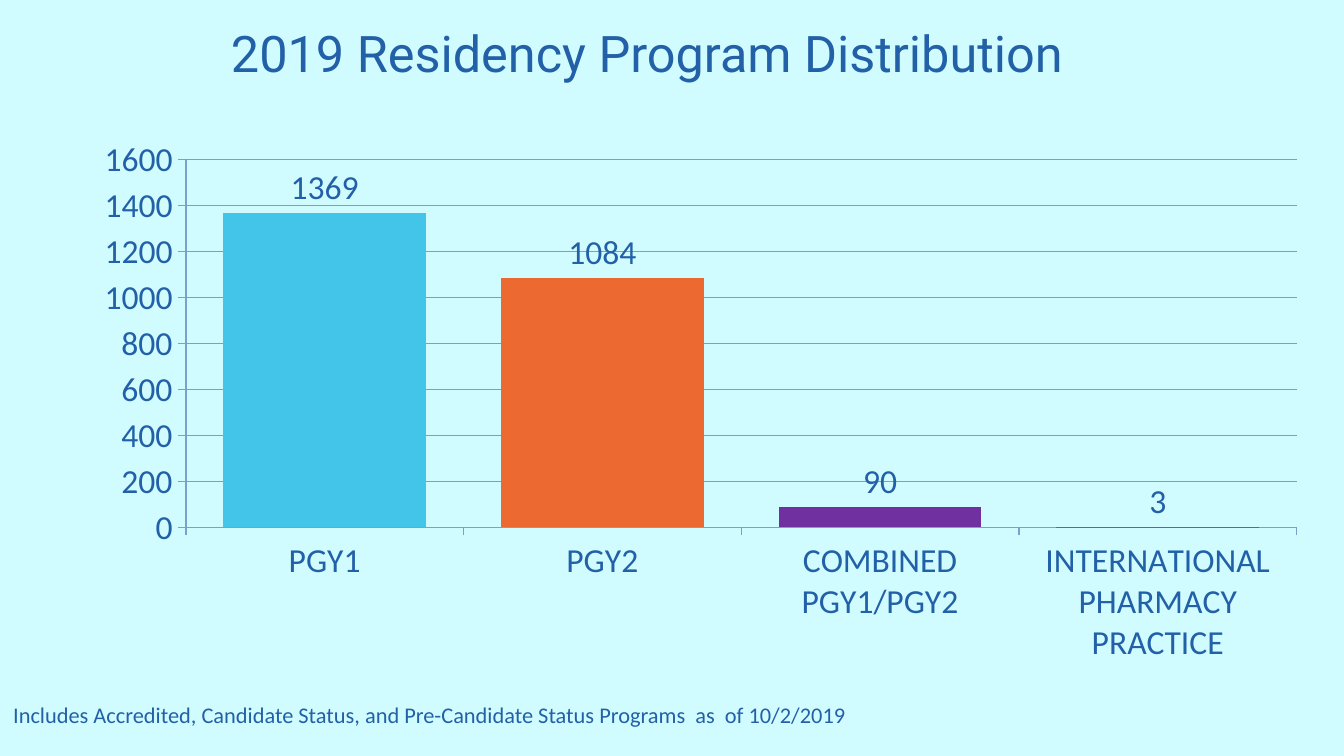
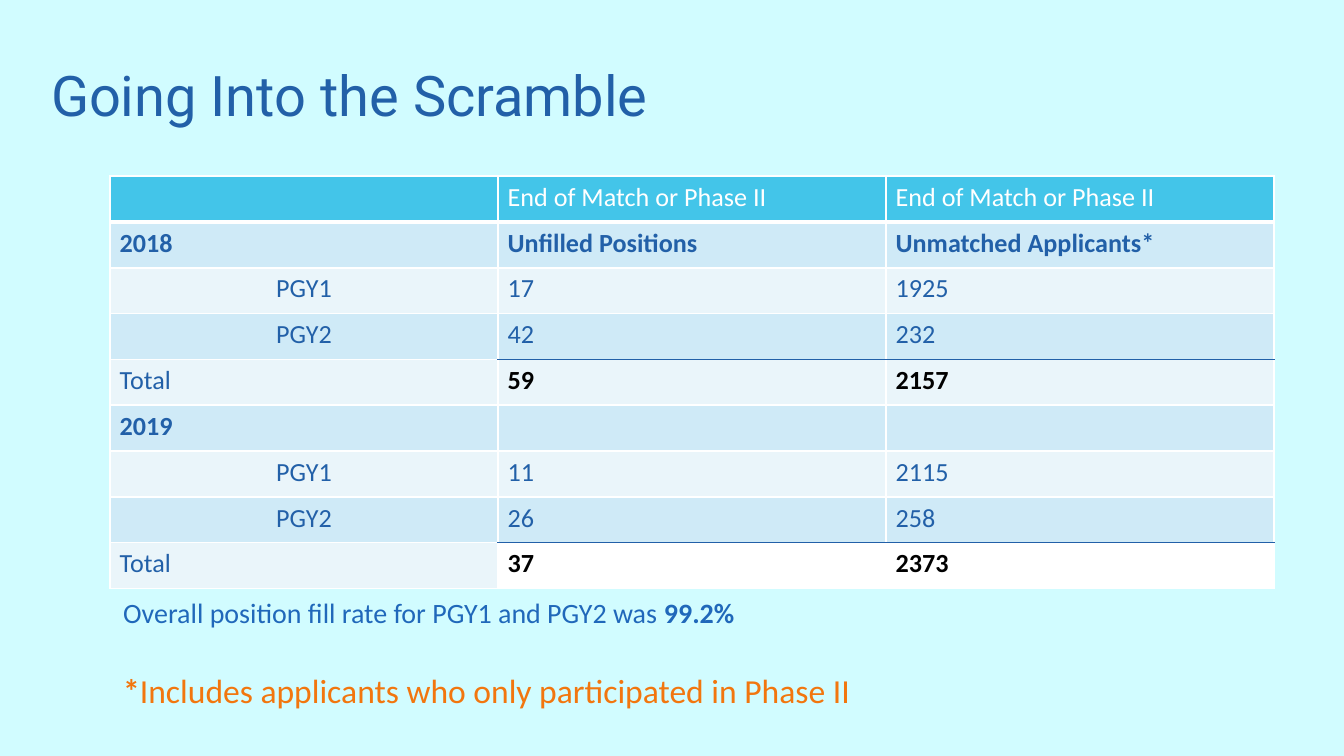
from lxml import etree
from pptx import Presentation
from pptx.chart.data import CategoryChartData
from pptx.dml.color import RGBColor
from pptx.enum.chart import XL_CHART_TYPE, XL_LABEL_POSITION, XL_TICK_MARK
from pptx.enum.text import MSO_ANCHOR, MSO_AUTO_SIZE, PP_ALIGN
from pptx.oxml import parse_xml
from pptx.oxml.ns import nsdecls, qn
from pptx.util import Cm, Pt

# Shared look
PALE_CYAN = RGBColor(0xD1, 0xFC, 0xFF)
NAVY = RGBColor(0x22, 0x60, 0xA8)
BLUE = RGBColor(0x20, 0x68, 0xBA)
SKY = RGBColor(0x43, 0xC5, 0xE9)
ORANGE = RGBColor(0xED, 0x69, 0x32)
NOTE_ORANGE = RGBColor(0xF2, 0x76, 0x0E)
PURPLE = RGBColor(0x70, 0x30, 0xA0)
BRICK = RGBColor(0xAA, 0x50, 0x48)
GRID = RGBColor(0x7A, 0xA3, 0xB5)
AXIS = RGBColor(0x7F, 0x9F, 0xC8)
BAND_DARK = RGBColor(0xCF, 0xEA, 0xF7)
BAND_LIGHT = RGBColor(0xEA, 0xF5, 0xFA)
WHITE = RGBColor(0xFF, 0xFF, 0xFF)
BLACK = RGBColor(0, 0, 0)
TITLE_FONT, BODY_FONT = "Roboto", "Calibri"

# Content: residency programs (category, count, colour)
DISTRIBUTION_TITLE = "2019 Residency Program Distribution"
PROGRAMS = [
    ("PGY1", 1369, SKY),
    ("PGY2", 1084, ORANGE),
    ("COMBINED PGY1/PGY2", 90, PURPLE),
    ("INTERNATIONAL PHARMACY PRACTICE", 3, BRICK),
]
PLOT_AREA = {"x": 0.096, "y": 0.039, "w": 0.887, "h": 0.603}
STATUS_NOTE = ("Includes Accredited, Candidate Status, and Pre-Candidate "
               "Status Programs  as  of 10/2/2019")

# Content: scramble results
SCRAMBLE_TITLE = "Going Into the Scramble"
RESULTS = [
    ("", "End of Match or Phase II", "End of Match or Phase II"),
    ("2018", "Unfilled Positions", "Unmatched Applicants*"),
    ("PGY1", "17", "1925"),
    ("PGY2", "42", "232"),
    ("Total", "59", "2157"),
    ("2019", "", ""),
    ("PGY1", "11", "2115"),
    ("PGY2", "26", "258"),
    ("Total", "37", "2373"),
]
# Each note: space before, then runs of (text, size, bold, colour)
RESULT_NOTES = [
    (0, [("Overall position fill rate for PGY1 and PGY2 was ", 15, False, BLUE),
         ("99.2%", 15, True, BLUE)]),
    (22, [("*", 18, True, NOTE_ORANGE),
          ("Includes applicants who only participated in Phase II", 18, False,
           NOTE_ORANGE)]),
]


def add_run(paragraph, text, size, color, bold=False, font=BODY_FONT):
    run = paragraph.add_run()
    run.text = text
    run.font.name, run.font.size, run.font.bold = font, Pt(size), bold
    run.font.color.rgb = color


def add_titled_slide(prs, text, size, box, anchor):
    slide = prs.slides.add_slide(prs.slide_layouts[5])
    title = slide.shapes.title
    title.left, title.top, title.width, title.height = map(Cm, box)
    frame = title.text_frame
    frame.auto_size = MSO_AUTO_SIZE.NONE
    frame.vertical_anchor = anchor
    frame.margin_top = frame.margin_bottom = 0
    frame.paragraphs[0].alignment = PP_ALIGN.LEFT
    add_run(frame.paragraphs[0], text, size, NAVY, font=TITLE_FONT)
    return slide


def add_notes_box(slide, box, notes):
    frame = slide.shapes.add_textbox(*map(Cm, box)).text_frame
    frame.word_wrap = True
    for i, (space, runs) in enumerate(notes):
        paragraph = frame.add_paragraph() if i else frame.paragraphs[0]
        if space:
            paragraph.space_before = Pt(space)
        for text, size, bold, color in runs:
            add_run(paragraph, text, size, color, bold)


def add_program_chart(slide, box):
    data = CategoryChartData()
    data.categories = [name for name, _, _ in PROGRAMS]
    for i, (_, count, _) in enumerate(PROGRAMS):
        data.add_series(f"Series {i + 1}",
                        [count if j == i else None for j in range(len(PROGRAMS))])
    chart = slide.shapes.add_chart(
        XL_CHART_TYPE.COLUMN_CLUSTERED, *map(Cm, box), data).chart
    chart.has_legend = chart.has_title = False
    chart.font.name, chart.font.size = BODY_FONT, Pt(18)
    chart.font.color.rgb = NAVY

    # Bars and labels
    plot = chart.plots[0]
    plot.gap_width, plot.overlap, plot.vary_by_categories = 37, 100, False
    for series, (_, _, color) in zip(plot.series, PROGRAMS):
        series.invert_if_negative = False
        series.format.fill.solid()
        series.format.fill.fore_color.rgb = color
        labels = series.data_labels
        labels.show_value = True
        labels.position = XL_LABEL_POSITION.OUTSIDE_END

    # Axes
    counts = chart.value_axis
    counts.minimum_scale, counts.maximum_scale, counts.major_unit = 0, 1600, 200
    counts.has_major_gridlines = True
    counts.major_gridlines.format.line.color.rgb = GRID
    counts.major_gridlines.format.line.width = Pt(0.75)
    for axis in (counts, chart.category_axis):
        axis.major_tick_mark = XL_TICK_MARK.OUTSIDE
        axis.format.line.color.rgb = AXIS
        axis.format.line.width = Pt(0.75)

    # Fixed inner plot area
    area = chart._chartSpace.find(".//" + qn("c:plotArea"))
    for layout in area.findall(qn("c:layout")):
        area.remove(layout)
    parts = ['<c:layoutTarget val="inner"/>', '<c:xMode val="edge"/>',
             '<c:yMode val="edge"/>']
    parts += [f'<c:{key} val="{value}"/>' for key, value in PLOT_AREA.items()]
    area.insert(0, parse_xml(f'<c:layout {nsdecls("c")}><c:manualLayout>'
                             f'{"".join(parts)}</c:manualLayout></c:layout>'))


def set_border(cell, side, color, width):
    line = etree.SubElement(cell._tc.get_or_add_tcPr(), qn(f"a:ln{side}"),
                            w=str(Pt(width)))
    fill = etree.SubElement(line, qn("a:solidFill"))
    etree.SubElement(fill, qn("a:srgbClr"), val=str(color))


def add_results_table(slide, box):
    table = slide.shapes.add_table(
        len(RESULTS), len(RESULTS[0]), *map(Cm, box)).table
    for row in table.rows:
        row.height = Cm(box[3] / len(RESULTS))
    for r, values in enumerate(RESULTS):
        kind = values[0]
        for c, text in enumerate(values):
            cell = table.cell(r, c)
            cell.margin_left = cell.margin_right = Cm(0.18)
            cell.margin_top = cell.margin_bottom = Cm(0.1)
            is_sum = kind == "Total" and c > 0
            above_sum = kind == "PGY2" and c > 0

            # Borders come before the fill
            set_border(cell, "L", WHITE, 1)
            set_border(cell, "R", WHITE, 1)
            set_border(cell, "T", NAVY if is_sum else WHITE,
                       3 if r == 1 else 1)
            set_border(cell, "B", NAVY if above_sum else WHITE,
                       3 if r == 0 else 1)
            if r == 0:
                fill = SKY
            elif is_sum and r == len(RESULTS) - 1:
                fill = WHITE
            else:
                fill = BAND_DARK if r % 2 else BAND_LIGHT
            cell.fill.solid()
            cell.fill.fore_color.rgb = fill

            paragraph = cell.text_frame.paragraphs[0]
            if c == 0 and kind.startswith("PGY"):
                paragraph.alignment = PP_ALIGN.CENTER
            if text:
                color = WHITE if r == 0 else BLACK if is_sum else NAVY
                add_run(paragraph, text, 14, color,
                        is_sum or kind.startswith("20"))
            else:
                etree.SubElement(paragraph._p, qn("a:endParaRPr"), sz="1400")


def main():
    prs = Presentation()
    prs.slide_width, prs.slide_height = Cm(25.4), Cm(14.29)
    background = prs.slide_master.background.fill
    background.solid()
    background.fore_color.rgb = PALE_CYAN

    # Program distribution
    slide = add_titled_slide(prs, DISTRIBUTION_TITLE, 27,
                             (4.11, 0.41, 17.15, 2.16), MSO_ANCHOR.TOP)
    add_program_chart(slide, (1.24, 2.57, 23.67, 11.53))
    add_notes_box(slide, (0, 13.13, 16.64, 0.76),
                  [(0, [(STATUS_NOTE, 12, False, NAVY)])])

    # Scramble results
    slide = add_titled_slide(prs, SCRAMBLE_TITLE, 30,
                             (0.71, 0.58, 24.13, 2.39), MSO_ANCHOR.MIDDLE)
    add_results_table(slide, (2.08, 3.33, 22, 7.8))
    add_notes_box(slide, (2.08, 11.13, 14.6, 3.15), RESULT_NOTES)

    prs.save("out.pptx")


if __name__ == "__main__":
    main()
